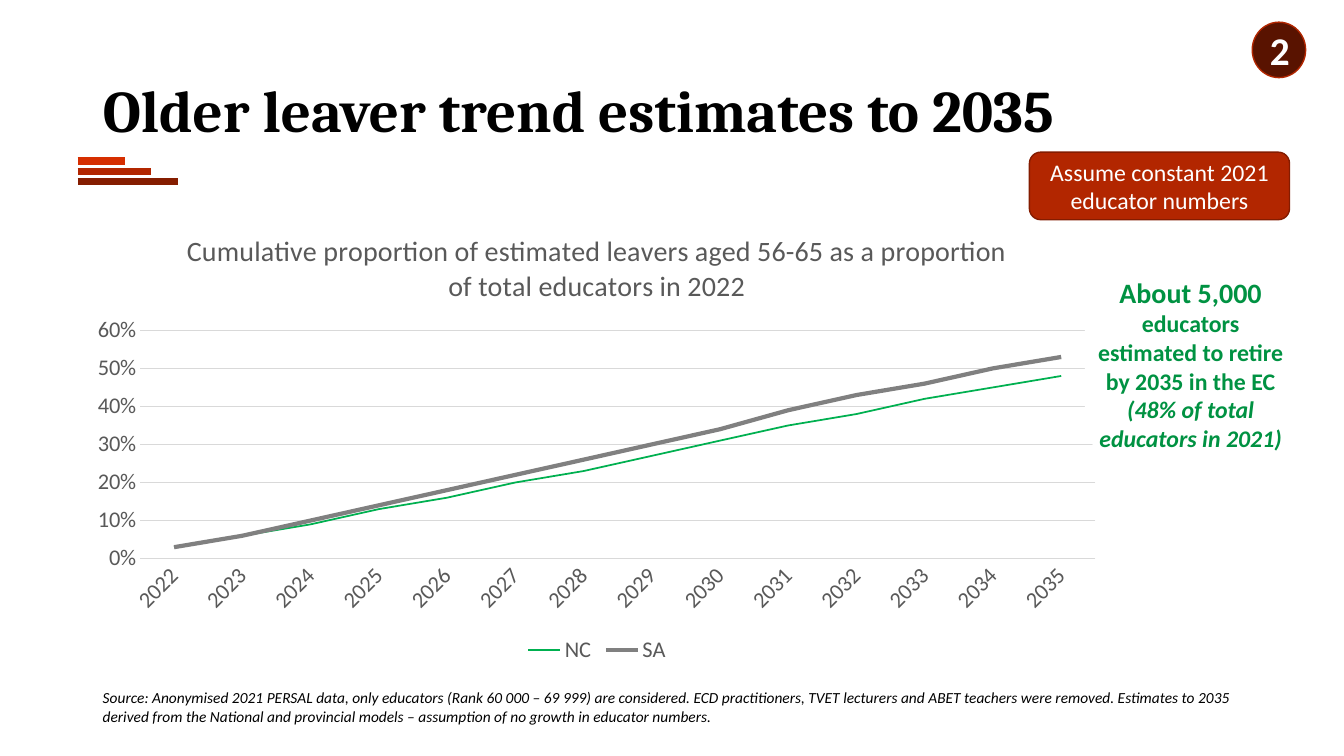
"""Build the slide on older leaver trend estimates to 2035."""
from lxml import etree
from pptx import Presentation
from pptx.chart.data import CategoryChartData
from pptx.dml.color import RGBColor
from pptx.enum.chart import XL_CHART_TYPE, XL_LEGEND_POSITION, XL_TICK_MARK
from pptx.enum.shapes import MSO_CONNECTOR, MSO_SHAPE
from pptx.enum.text import MSO_ANCHOR, PP_ALIGN
from pptx.oxml import parse_xml
from pptx.oxml.ns import nsdecls, qn
from pptx.util import Inches, Pt

LINE_CHART = XL_CHART_TYPE.LINE
LEGEND_BOTTOM = XL_LEGEND_POSITION.BOTTOM
NO_TICKS = XL_TICK_MARK.NONE
STRAIGHT = MSO_CONNECTOR.STRAIGHT
ROUNDED = MSO_SHAPE.ROUNDED_RECTANGLE
OVAL = MSO_SHAPE.OVAL
MIDDLE = MSO_ANCHOR.MIDDLE
CENTER = PP_ALIGN.CENTER
LEFT = PP_ALIGN.LEFT

BLACK, WHITE, GREY, PALE = "000000", "FFFFFF", "595959", "D9D9D9"
GREEN, RED, DARK_RED, MAROON = "009242", "B22600", "841C00", "591300"

TITLE = "Older leaver trend estimates to 2035"
SOURCE = (
    "Source: Anonymised 2021 PERSAL data, only educators (Rank 60 000 – 69 999) "
    "are considered. ECD practitioners, TVET lecturers and ABET teachers were "
    "removed. Estimates to 2035 derived from the National and provincial models "
    "– assumption of no growth in educator numbers."
)
ASSUMPTION = "Assume constant 2021 educator numbers"
FINDING = [
    ("About 5,000", {"size": 20, "bold": True}),
    ("educators estimated to retire by 2035 in the EC", {"size": 17, "bold": True}),
    ("(48% of total educators in 2021)", {"size": 17, "bold": True, "italic": True}),
]
CHART_TITLE = (
    "Cumulative proportion of estimated leavers aged 56-65 "
    "as a proportion of total educators in 2022"
)
YEARS = [str(year) for year in range(2022, 2036)]
SERIES = [
    ("NC", "00B050", 1.25, [0.03, 0.06, 0.09, 0.13, 0.16, 0.2, 0.23,
                            0.27, 0.31, 0.35, 0.38, 0.42, 0.45, 0.48]),
    ("SA", "808080", 3, [0.03, 0.06, 0.1, 0.14, 0.18, 0.22, 0.26,
                         0.3, 0.34, 0.39, 0.43, 0.46, 0.5, 0.53]),
]
PLOT_AREA = {"x": 0.06, "y": 0.26, "w": 0.92, "h": 0.5}
ACCENT_BARS = [(1.0, "851D00"), (0.73, RED), (0.47, "D62E00")]


def color(value):
    return RGBColor.from_string(value)


def style_font(font, size, value, bold=False, italic=False, name="Calibri"):
    font.name, font.size = name, Pt(size)
    font.bold, font.italic = bold, italic
    font.color.rgb = color(value)


def style_line(line, value, width):
    line.color.rgb = color(value)
    line.width = Pt(width)


def write(shape, paragraphs, value, align=CENTER):
    frame = shape.text_frame
    frame.word_wrap = True
    frame.vertical_anchor = MIDDLE
    frame.text = "\n".join(text for text, _ in paragraphs)
    for para, (_, look) in zip(frame.paragraphs, paragraphs):
        para.alignment = align
        style_font(para.runs[0].font, value=value, **look)


def add_box(page, kind, place, fill, outline=None):
    box = page.shapes.add_shape(kind, *map(Inches, place))
    box.shadow.inherit = False
    box.fill.solid()
    box.fill.fore_color.rgb = color(fill)
    if outline:
        style_line(box.line, outline, 1)
    else:
        box.line.fill.background()
    return box


def add_accent_bars(page):
    for index, (length, value) in enumerate(ACCENT_BARS):
        top = Inches(1.8 - 0.1 * index)
        bar = page.shapes.add_connector(
            STRAIGHT, Inches(0.77), top, Inches(0.77 + length), top)
        style_line(bar.line, value, 5.5)
        etree.SubElement(bar._element.spPr, qn("a:effectLst"))


def add_title(page):
    title = page.shapes.title
    title.left, title.top, title.width, title.height = map(
        Inches, (0.92, 0.4, 11.5, 1.45))
    write(title, [(TITLE, {"size": 42, "bold": True, "name": "Cambria"})], BLACK, LEFT)
    title.text_frame.paragraphs[0].line_spacing = 0.9


def place_plot(chart):
    plot_area = chart._chartSpace.chart.plotArea
    for layout in plot_area.findall(qn("c:layout")):
        plot_area.remove(layout)
    modes = '<c:xMode val="edge"/><c:yMode val="edge"/>'
    sizes = "".join(f'<c:{key} val="{share}"/>' for key, share in PLOT_AREA.items())
    plot_area.insert(0, parse_xml(
        f'<c:layout {nsdecls("c")}><c:manualLayout><c:layoutTarget val="inner"/>'
        f"{modes}{sizes}</c:manualLayout></c:layout>"))


def add_trend_chart(page):
    data = CategoryChartData(number_format="0%")
    data.categories = YEARS
    for name, _, _, values in SERIES:
        data.add_series(name, values)
    place = map(Inches, (0.77, 2.1, 10.3, 4.53))
    chart = page.shapes.add_chart(LINE_CHART, *place, data).chart
    style_font(chart.font, 16, BLACK)

    chart.has_title = True
    heading = chart.chart_title.text_frame
    heading.text = CHART_TITLE
    style_font(heading.paragraphs[0].runs[0].font, 20, GREY)
    chart.chart_title.include_in_layout = False
    chart.has_legend = True
    chart.legend.position = LEGEND_BOTTOM
    chart.legend.include_in_layout = False
    style_font(chart.legend.font, 16, GREY)

    years, shares = chart.category_axis, chart.value_axis
    for axis in (years, shares):
        axis.major_tick_mark = axis.minor_tick_mark = NO_TICKS
        style_font(axis.tick_labels.font, 16, GREY)
    style_line(years.format.line, PALE, 0.75)
    years._element.find(qn("c:txPr")).find(qn("a:bodyPr")).set("rot", "-2700000")
    shares.minimum_scale, shares.maximum_scale, shares.major_unit = 0, 0.6, 0.1
    shares.tick_labels.number_format = "0%"
    shares.tick_labels.number_format_is_linked = False
    shares.format.line.fill.background()
    style_line(shares.major_gridlines.format.line, PALE, 0.75)

    plot = chart.plots[0]
    plot.vary_by_categories = False
    for series, (_, value, width, _) in zip(plot.series, SERIES):
        series.smooth = False
        style_line(series.format.line, value, width)
    place_plot(chart)


def main():
    deck = Presentation()
    deck.slide_width, deck.slide_height = Inches(13.33), Inches(7.5)
    page = deck.slides.add_slide(deck.slide_layouts[5])
    add_accent_bars(page)
    add_title(page)
    source = page.shapes.add_textbox(*map(Inches, (0.92, 6.83, 11.72, 0.37)))
    write(source, [(SOURCE, {"size": 11, "italic": True})], BLACK, LEFT)
    assumption = add_box(page, ROUNDED, (10.21, 1.51, 2.58, 0.67), RED, DARK_RED)
    write(assumption, [(ASSUMPTION, {"size": 17})], WHITE)
    add_trend_chart(page)
    finding = add_box(page, ROUNDED, (10.76, 2.71, 2.1, 1.8), WHITE)
    write(finding, FINDING, GREEN)
    frame = finding.text_frame
    frame.margin_left = frame.margin_right = frame.margin_top = frame.margin_bottom = 0
    badge = add_box(page, OVAL, (12.42, 0.22, 0.53, 0.55), MAROON, RED)
    write(badge, [("2", {"size": 28, "bold": True})], WHITE)
    deck.save("out.pptx")


if __name__ == "__main__":
    main()
